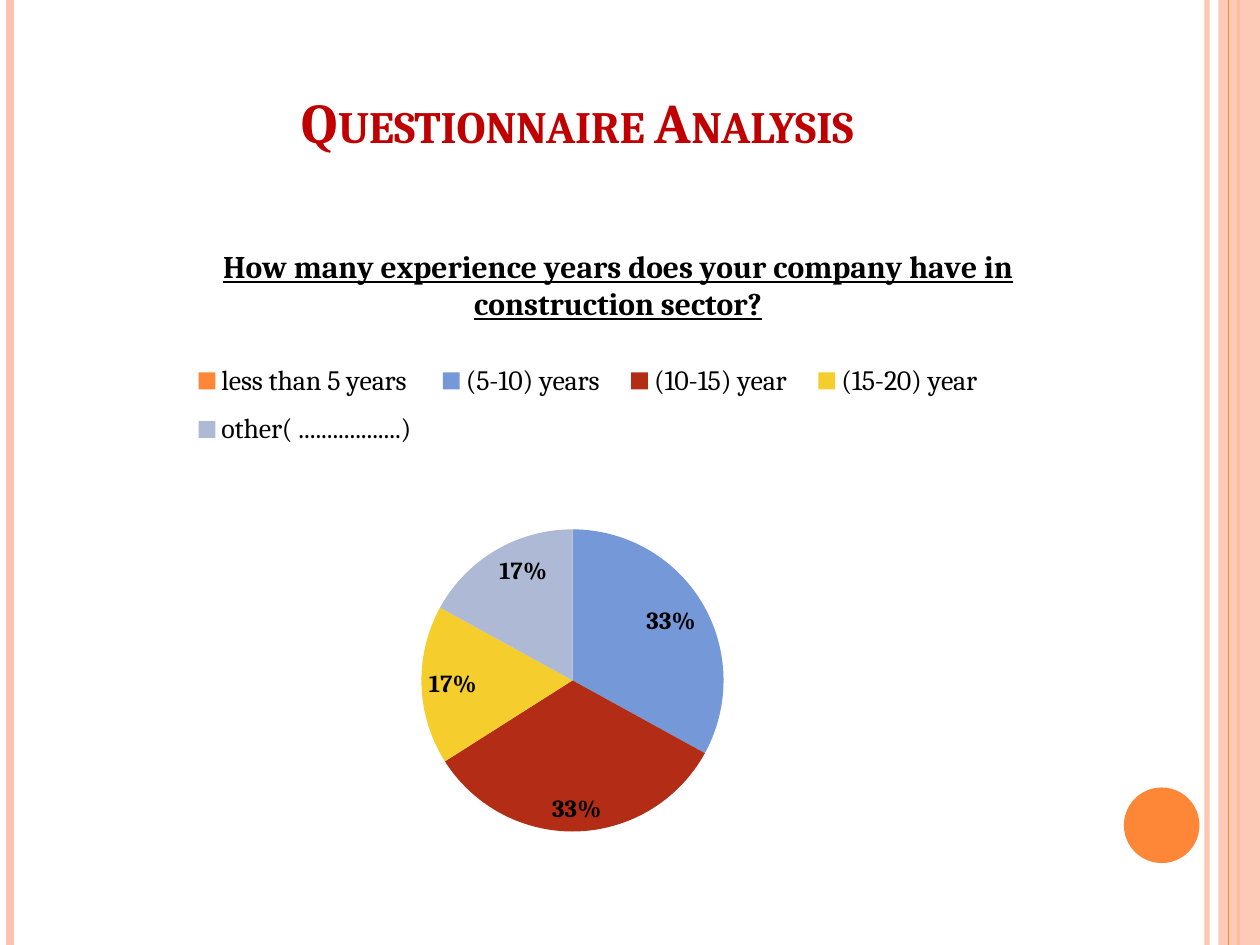
from dataclasses import dataclass

from lxml.etree import SubElement
from pptx import Presentation
from pptx.chart.data import CategoryChartData
from pptx.dml.color import RGBColor
from pptx.enum.chart import XL_CHART_TYPE, XL_LABEL_POSITION, XL_LEGEND_POSITION
from pptx.enum.shapes import MSO_CONNECTOR, MSO_SHAPE
from pptx.enum.text import MSO_ANCHOR, PP_ALIGN
from pptx.oxml import parse_xml
from pptx.oxml.ns import nsdecls, qn
from pptx.util import Inches, Pt


@dataclass(frozen=True)
class Theme:
    font: str = "Cambria"
    heading: str = "C00000"
    ink: str = "000000"
    accent: str = "FE8637"
    band: str = "FEC3AE"
    slices: tuple = ("FE8637", "7598D9", "B32C16", "F5CD2D", "AEBAD5")
    heading_size: int = 32
    question_size: int = 18
    legend_size: int = 16
    label_size: int = 14


THEME = Theme()


def style_font(font, size, color=THEME.ink, bold=False, underline=False):
    font.name = THEME.font
    font.size = Pt(size)
    font.bold = bold
    font.underline = underline
    font.color.rgb = RGBColor.from_string(color)


def write_text(frame, text, align=PP_ALIGN.CENTER, small_caps=False, **font_format):
    paragraph = frame.paragraphs[0]
    paragraph.alignment = align
    run = paragraph.add_run()
    run.text = text
    style_font(run.font, **font_format)
    if small_caps:
        run.font._element.set("cap", "small")


def set_opacity(fill, percent):
    color = fill._xPr.find(qn("a:solidFill"))[0]
    SubElement(color, qn("a:alpha"), val=str(percent * 1000))


def place(element, x, y, width=None, height=None, inner=False):
    for old in element.findall(qn("c:layout")):
        element.remove(old)
    target = '<c:layoutTarget val="inner"/>' if inner else ""
    sizes = {"w": width, "h": height}
    modes = "".join(f'<c:{key}Mode val="edge"/>' for key in "xy")
    values = {"x": x, "y": y, **{k: v for k, v in sizes.items() if v is not None}}
    numbers = "".join(f'<c:{key} val="{value}"/>' for key, value in values.items())
    layout = parse_xml(
        f'<c:layout {nsdecls("c")}><c:manualLayout>{target}{modes}{numbers}'
        "</c:manualLayout></c:layout>"
    )
    before = ("c:tx", "c:legendPos", "c:legendEntry")
    index = sum(child.tag in [qn(tag) for tag in before] for child in element)
    element.insert(index, layout)


class SlideBuilder:
    def __init__(self, deck, theme):
        self.theme = theme
        self.slide = deck.slides.add_slide(deck.slide_layouts[6])
        self.shapes = self.slide.shapes
        self.height = deck.slide_height

    def stripe(self, x, color, width, opacity=100):
        stripe = self.shapes.add_connector(
            MSO_CONNECTOR.STRAIGHT, Inches(x), 0, Inches(x), self.height
        )
        stripe.line.color.rgb = RGBColor.from_string(color)
        stripe.line.width = Pt(width)
        if opacity < 100:
            set_opacity(stripe.line.fill, opacity)
        SubElement(stripe._element.spPr, qn("a:effectLst"))

    def shape(self, kind, box, color, opacity=100):
        shape = self.shapes.add_shape(kind, *map(Inches, box))
        shape.shadow.inherit = False
        shape.line.fill.background()
        shape.fill.solid()
        shape.fill.fore_color.rgb = RGBColor.from_string(color)
        if opacity < 100:
            set_opacity(shape.fill, opacity)

    def heading(self, text, box):
        frame = self.shapes.add_textbox(*map(Inches, box)).text_frame
        frame.word_wrap = True
        frame.vertical_anchor = MSO_ANCHOR.BOTTOM
        write_text(frame, text, size=self.theme.heading_size,
                   color=self.theme.heading, bold=True, small_caps=True)

    def pie(self, question, answers, box):
        data = CategoryChartData()
        data.categories = list(answers)
        data.add_series("Series 1", list(answers.values()))
        chart = self.shapes.add_chart(
            XL_CHART_TYPE.PIE, *map(Inches, box), data
        ).chart
        style_font(chart.font, 10)

        chart.has_title = True
        write_text(chart.chart_title.text_frame, question,
                   size=self.theme.question_size, bold=True, underline=True)
        place(chart.chart_title._element, 0.15, 0.03)

        chart.has_legend = True
        chart.legend.position = XL_LEGEND_POSITION.TOP
        chart.legend.include_in_layout = False
        style_font(chart.legend.font, self.theme.legend_size)
        place(chart.legend._element, 0.11, 0.19, 0.8, 0.17)

        plot = chart.plots[0]
        plot.vary_by_categories = True
        place(chart._chartSpace.chart.plotArea, 0.02, 0.46, 0.95, 0.45, inner=True)
        series = plot.series[0]
        for index, color in enumerate(self.theme.slices):
            point = series.points[index].format
            point.fill.solid()
            point.fill.fore_color.rgb = RGBColor.from_string(color)
            point.line.fill.background()

        labels = series.data_labels
        labels.show_percentage = True
        labels.show_value = False
        labels.number_format = "0%"
        labels.number_format_is_linked = False
        labels.position = XL_LABEL_POSITION.INSIDE_END
        style_font(labels.font, self.theme.label_size, bold=True)
        for index, value in enumerate(answers.values()):
            if value == 0:
                labels._element.insert(index, parse_xml(
                    f'<c:dLbl {nsdecls("c")}><c:idx val="{index}"/>'
                    '<c:delete val="1"/></c:dLbl>'
                ))


def main():
    deck = Presentation()
    deck.slide_width, deck.slide_height = Inches(10), Inches(7.5)
    page = SlideBuilder(deck, THEME)

    page.stripe(9.58, THEME.band, 3, opacity=93)
    page.stripe(0.08, THEME.band, 4.5)
    page.stripe(9.83, THEME.accent, 1.5)
    page.shape(MSO_SHAPE.RECTANGLE, (9.67, 0, 0.33, 7.5), THEME.band, opacity=87)
    page.stripe(9.75, THEME.accent, 0.75)
    page.shape(MSO_SHAPE.OVAL, (8.92, 6.25, 0.6, 0.6), THEME.accent)

    page.heading("Questionnaire Analysis", (0.5, 0.03, 8.17, 1.25))
    page.pie(
        "How many experience years does your company have in construction sector?",
        {
            "less than 5 years": 0,
            "(5-10) years": 33,
            "(10-15) year": 33,
            "(15-20) year": 17,
            "other( ..................)": 17,
        },
        (0.5, 1.75, 8.17, 5.33),
    )
    deck.save("out.pptx")


if __name__ == "__main__":
    main()
